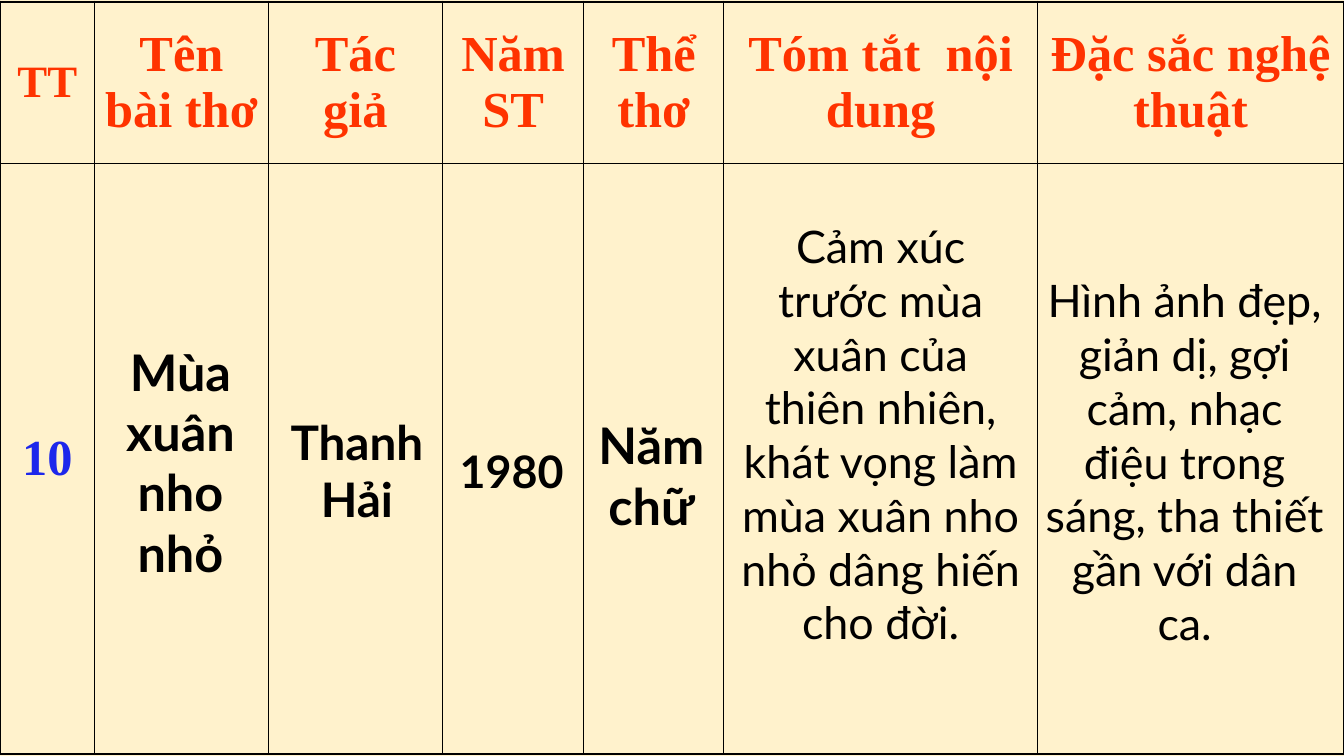
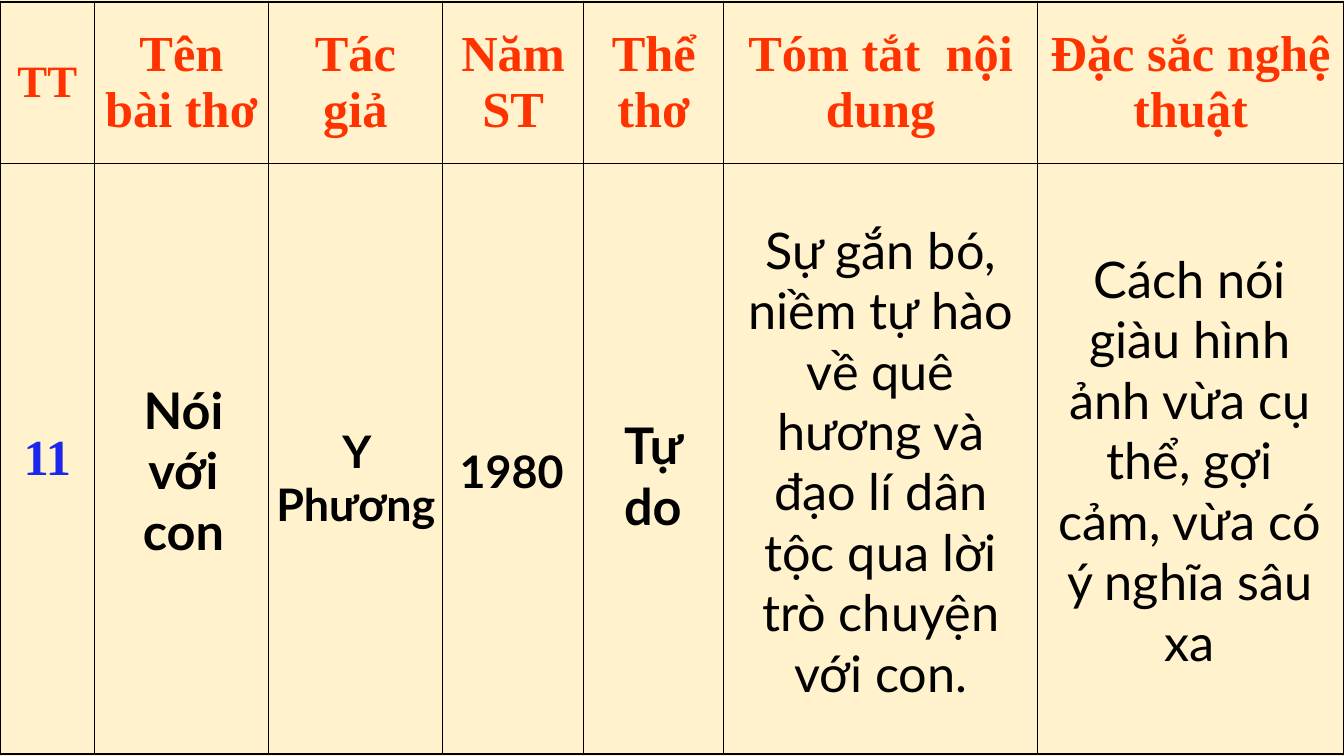
from dataclasses import dataclass

from lxml.etree import SubElement
from pptx import Presentation
from pptx.dml.color import RGBColor
from pptx.enum.text import MSO_ANCHOR, MSO_AUTO_SIZE as AutoSize, PP_ALIGN
from pptx.oxml.ns import qn
from pptx.util import Pt

PX = 9144


@dataclass(frozen=True)
class Theme:
    paper: str = "FFF2CC"
    ink: str = "000000"
    heading: str = "FF3300"
    number: str = "1D27EB"
    table_font: str = "Times New Roman"
    body_font: str = "Lato"
    small: int = 32
    medium: int = 34
    large: int = 36
    space_before: int = 6
    thin: float = 1
    thick: float = 2.25


theme = Theme()

HEADINGS = ["TT", "Tên bài thơ", "Tác giả", "Năm ST", "Thể thơ",
            "Tóm tắt  nội dung", "Đặc sắc nghệ thuật"]
COLUMNS = [94, 172, 173, 140, 139, 311, 304]
ROWS = [160, 586]
WIDTH, HEIGHT, TABLE_TOP = sum(COLUMNS), 750, 2

POEMS = [
    ("10", [
        ("Mùa xuân nho nhỏ", (97, 333, 164, 252), theme.large, True),
        ("Thanh Hải", (263, 405, 182, 125), theme.medium, True),
        ("1980", (446, 435, 124, 64), theme.small, True),
        ("Năm chữ", (575, 406, 142, 131), theme.large, True),
        ("Cảm xúc trước mùa xuân của thiên nhiên, khát vọng làm mùa xuân nho nhỏ "
         "dâng hiến cho đời.", (723, 212, 301, 495), theme.small, False),
        ("Hình ảnh đẹp, giản dị, gợi cảm, nhạc điệu trong sáng, tha thiết gần với dân ca.",
         (1027, 266, 296, 387), theme.small, False),
    ]),
    ("11", [
        ("Nói với con", (100, 371, 164, 192), theme.large, True),
        ("Y Phương", (262, 415, 182, 118), theme.small, True),
        ("1980", (446, 435, 124, 64), theme.small, True),
        ("Tự do", (581, 406, 133, 131), theme.large, True),
        ("Sự gắn bó, niềm tự hào về quê hương và đạo lí dân tộc qua lời trò chuyện "
         "với con.", (723, 212, 301, 495), theme.large, False),
        ("Cách nói giàu hình ảnh vừa cụ thể, gợi cảm, vừa có ý nghĩa sâu xa",
         (1039, 241, 282, 434), theme.large, False),
    ]),
]


def write(frame, text, font, size, color, bold):
    paragraph = frame.paragraphs[0]
    paragraph.alignment = PP_ALIGN.CENTER
    paragraph.space_before = Pt(theme.space_before if bold else 0)
    run = paragraph.add_run()
    run.text = text
    run.font.name = font
    run.font.size = Pt(size)
    run.font.bold = bold
    run.font.color.rgb = RGBColor.from_string(color)
    return paragraph


def draw_borders(cell, row, column):
    outer_edges = {
        "lnL": column == 0,
        "lnR": column == len(COLUMNS) - 1,
        "lnT": row == 0,
        "lnB": row == len(ROWS) - 1,
    }
    properties = cell._tc.get_or_add_tcPr()
    for edge, outer in outer_edges.items():
        weight = Pt(theme.thick if outer else theme.thin)
        line = SubElement(properties, qn(f"a:{edge}"), w=str(int(weight)))
        fill = SubElement(line, qn("a:solidFill"))
        SubElement(fill, qn("a:srgbClr"), val=theme.ink)


presentation = Presentation()
presentation.slide_width = WIDTH * PX
presentation.slide_height = HEIGHT * PX
background = presentation.slide_master.background.fill
background.solid()
background.fore_color.rgb = RGBColor.from_string(theme.paper)

for number, details in POEMS:
    slide = presentation.slides.add_slide(presentation.slide_layouts[6])
    table = slide.shapes.add_table(len(ROWS), len(COLUMNS), 0, TABLE_TOP * PX,
                                   WIDTH * PX, sum(ROWS) * PX).table
    table.first_row = table.horz_banding = False
    for column, width in enumerate(COLUMNS):
        table.columns[column].width = width * PX
    for row, height in enumerate(ROWS):
        table.rows[row].height = height * PX
        for column in range(len(COLUMNS)):
            cell = table.cell(row, column)
            draw_borders(cell, row, column)
            cell.fill.background()
            cell.vertical_anchor = MSO_ANCHOR.MIDDLE

    for column, heading in enumerate(HEADINGS):
        size = theme.large if column else theme.small
        write(table.cell(0, column).text_frame, heading, theme.table_font, size,
              theme.heading, True)
    write(table.cell(1, 0).text_frame, number, theme.table_font, theme.large,
          theme.number, True)

    for text, box, size, bold in details:
        shape = slide.shapes.add_textbox(*(length * PX for length in box))
        frame = shape.text_frame
        frame.auto_size = AutoSize.SHAPE_TO_FIT_TEXT
        frame.word_wrap = not text.isdigit()
        paragraph = write(frame, text, theme.body_font, size, theme.ink, bold)
        if text.isdigit():
            paragraph.alignment = PP_ALIGN.LEFT

presentation.save("out.pptx")
